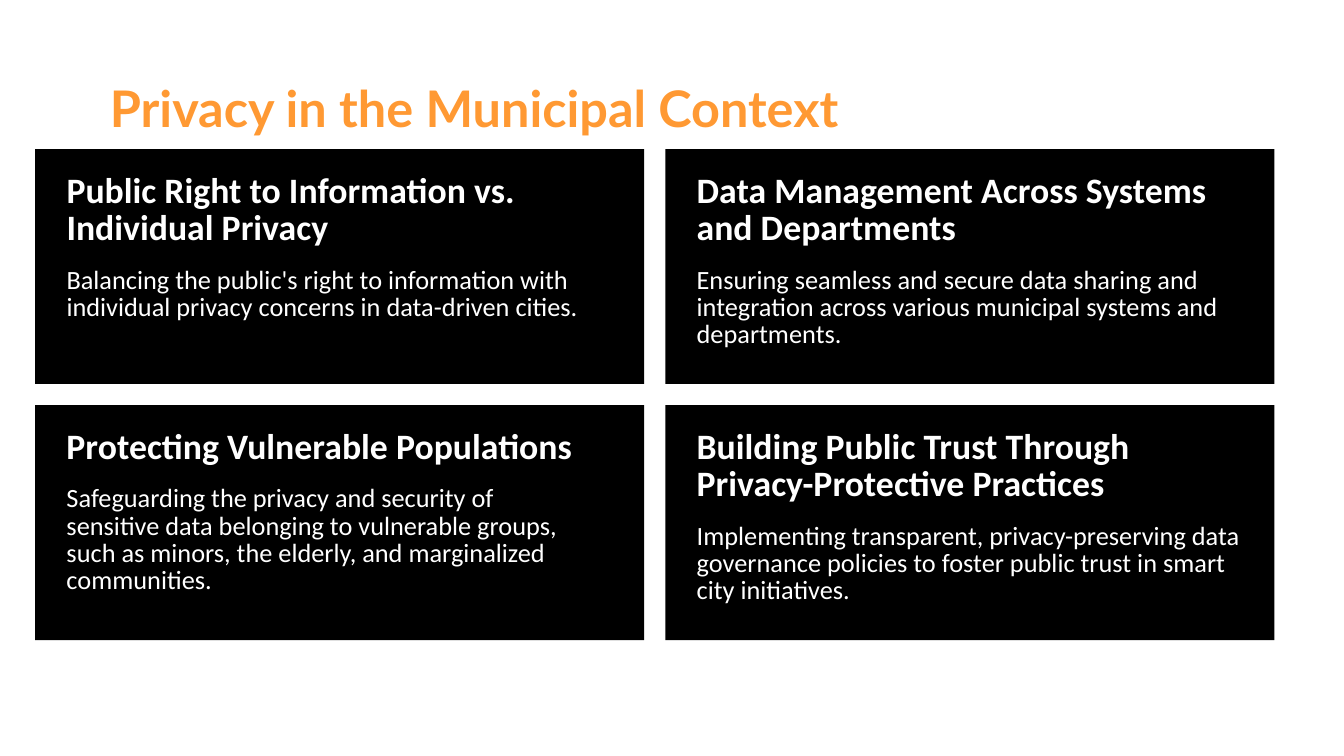
from pptx import Presentation
from pptx.dml.color import RGBColor
from pptx.enum.shapes import MSO_SHAPE
from pptx.enum.text import MSO_ANCHOR
from pptx.util import Inches, Pt

# Content: heading, its lines and width; body, its lines and width
TITLE = "Privacy in the Municipal Context"
CARDS = [
    (("Public Right to Information vs. Individual Privacy", 2, 5.42),
     ("Balancing the public's right to information with individual privacy "
      "concerns in data-driven cities.", 2, 5.42)),
    (("Data Management Across Systems and Departments", 2, 5.48),
     ("Ensuring seamless and secure data sharing and integration across "
      "various municipal systems and departments.", 3, 6.07)),
    (("Protecting Vulnerable Populations", 1, 6.07),
     ("Safeguarding the privacy and security of sensitive data belonging to "
      "vulnerable groups, such as minors, the elderly, and marginalized "
      "communities.", 3, 5.13)),
    (("Building Public Trust Through Privacy-Protective Practices", 2, 5.48),
     ("Implementing transparent, privacy-preserving data governance policies "
      "to foster public trust in smart city initiatives.", 3, 5.48)),
]

# Theme
THEME = {
    "card": RGBColor(0, 0, 0),
    "title": {"font": "Lato", "size": 36, "bold": True, "lead": 1.1,
              "color": RGBColor(0xFF, 0x99, 0x33)},
    "head": {"font": "Calibri", "size": 25.5, "bold": True, "lead": Pt(26.5),
             "color": RGBColor(255, 255, 255)},
    "body": {"font": "Calibri", "size": 18.8, "bold": False, "lead": Pt(19.5),
             "color": RGBColor(255, 255, 255)},
}

# Grid, in inches
COLS = 2
LEFT, TOP = 0.35, 1.48
WIDE, HIGH = 6.04, 2.33
GAP = 0.21
PAD_X, PAD_Y = 0.31, 0.24
HEAD_ROW, BODY_ROW, SPACE = 0.37, 0.27, 0.19

deck = Presentation()
deck.slide_width, deck.slide_height = Inches(13.33), Inches(7.5)
slide = deck.slides.add_slide(deck.slide_layouts[6])


def add_text(text, style, box, anchor=MSO_ANCHOR.TOP):
    look = THEME[style]
    frame = slide.shapes.add_textbox(*map(Inches, box)).text_frame
    form = {"word_wrap": True, "vertical_anchor": anchor, "margin_left": 0,
            "margin_right": 0, "margin_top": 0, "margin_bottom": 0}
    for key, value in form.items():
        setattr(frame, key, value)
    line = frame.paragraphs[0]
    line.line_spacing = look["lead"]
    run = line.add_run()
    run.text = text
    font = {"name": look["font"], "size": Pt(look["size"]),
            "bold": look["bold"]}
    for key, value in font.items():
        setattr(run.font, key, value)
    run.font.color.rgb = look["color"]


def add_card(x, y):
    card = slide.shapes.add_shape(
        MSO_SHAPE.RECTANGLE, *map(Inches, (x, y, WIDE, HIGH)))
    card.shadow.inherit = False
    card.fill.solid()
    card.fill.fore_color.rgb = THEME["card"]
    card.line.fill.background()


# Title
add_text(TITLE, "title", (1.09, 0.84, 11.15, 0.52), MSO_ANCHOR.BOTTOM)

# Cards
for i, (head, body) in enumerate(CARDS):
    row, col = divmod(i, COLS)
    x, y = LEFT + col * (WIDE + GAP), TOP + row * (HIGH + GAP)
    add_card(x, y)
    x, y = x + PAD_X, y + PAD_Y
    text, lines, width = head
    add_text(text, "head", (x, y, width, lines * HEAD_ROW))
    y += lines * HEAD_ROW + SPACE
    text, lines, width = body
    add_text(text, "body", (x, y, width, lines * BODY_ROW))

deck.save("out.pptx")
